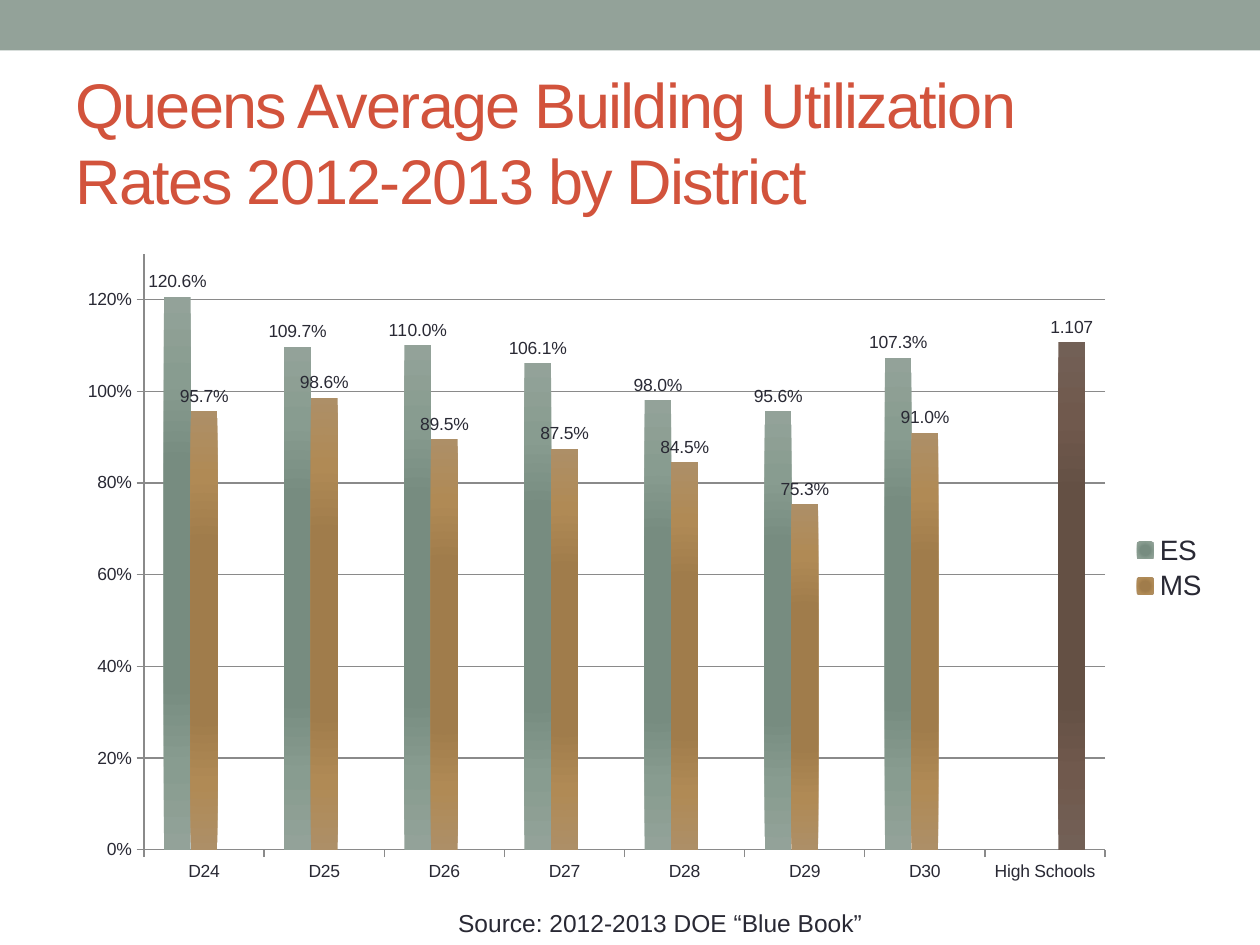
import pptx
import pptx.util
import pptx.chart.data
import pptx.dml.color
import pptx.enum.chart
import pptx.enum.shapes
import pptx.enum.text
import pptx.oxml
import pptx.oxml.ns

Inches = pptx.util.Inches
Pt = pptx.util.Pt

FONT = "Arial"
COLORS = {"band": "93A299", "title": "D2533C", "text": "292934", "line": "8A8A8A"}
TITLE = "Queens Average Building Utilization Rates 2012-2013 by District"
SOURCE = "Source: 2012-2013 DOE “Blue Book”"
CATEGORIES = ["D24", "D25", "D26", "D27", "D28", "D29", "D30", "High Schools"]
SERIES = [
    {"name": "ES", "format": "0.0%", "gradient": ("778C80", "889C90", "93A299"),
     "values": [1.206, 1.097, 1.1, 1.061, 0.98, 0.956, 1.073, None]},
    {"name": "MS", "format": "0.0%", "gradient": ("A07C4B", "B08A55", "AD8F67"),
     "values": [0.957, 0.986, 0.895, 0.875, 0.845, 0.753, 0.91, None]},
    {"name": "Series 3", "format": "General", "gradient": ("645044", "70594D", "726056"),
     "values": [None] * 7 + [1.107]},
]
PLOT_LAYOUT = {"x": 0.07, "y": 0.02, "w": 0.83, "h": 0.91}
NAMESPACES = pptx.oxml.ns.nsdecls("a", "c")


def rgb(name):
    return pptx.dml.color.RGBColor.from_string(COLORS[name])


def style_font(font, size, color):
    font.name = FONT
    font.size = Pt(size)
    font.color.rgb = rgb(color)


def write_text(shape, text, size, color):
    frame = shape.text_frame
    frame.word_wrap = True
    frame.text = text
    style_font(frame.paragraphs[0].runs[0].font, size, color)
    return frame


def gradient_fill(colors):
    stops = "".join(
        f'<a:gs pos="{position}"><a:srgbClr val="{color}"/></a:gs>'
        for position, color in zip((0, 40000, 70000, 100000), (colors[0], *colors))
    )
    return pptx.oxml.parse_xml(
        f'<a:gradFill {NAMESPACES} rotWithShape="1"><a:gsLst>{stops}</a:gsLst>'
        '<a:path path="circle"><a:fillToRect l="50000" t="50000" r="50000" b="50000"/>'
        "</a:path></a:gradFill>"
    )


def style_axis(axis):
    style_font(axis.tick_labels.font, 10, "text")
    axis.major_tick_mark = pptx.enum.chart.XL_TICK_MARK.OUTSIDE
    axis.minor_tick_mark = pptx.enum.chart.XL_TICK_MARK.NONE
    axis.format.line.color.rgb = rgb("line")
    axis.format.line.width = Pt(0.75)


def set_plot_layout(chart):
    plot_area = chart.plots[0]._element.getparent()
    for layout in plot_area.findall(pptx.oxml.ns.qn("c:layout")):
        plot_area.remove(layout)
    sizes = "".join(f'<c:{key} val="{value}"/>' for key, value in PLOT_LAYOUT.items())
    plot_area.insert(0, pptx.oxml.parse_xml(
        f'<c:layout {NAMESPACES}><c:manualLayout><c:layoutTarget val="inner"/>'
        f'<c:xMode val="edge"/><c:yMode val="edge"/>{sizes}</c:manualLayout></c:layout>'
    ))


def add_utilization_chart(slide):
    data = pptx.chart.data.CategoryChartData(number_format="0.0%")
    data.categories = CATEGORIES
    for item in SERIES:
        data.add_series(item["name"], item["values"], item["format"])
    chart = slide.shapes.add_chart(
        pptx.enum.chart.XL_CHART_TYPE.COLUMN_CLUSTERED,
        Inches(0.5), Inches(1.91), Inches(9.19), Inches(5.2), data,
    ).chart
    chart.has_title = False
    style_font(chart.font, 10, "text")

    style_axis(chart.category_axis)
    value_axis = chart.value_axis
    style_axis(value_axis)
    value_axis.minimum_scale = 0
    value_axis.maximum_scale = 1.3
    value_axis.major_unit = 0.2
    value_axis.tick_labels.number_format = "0%"
    value_axis.tick_labels.number_format_is_linked = False
    value_axis.major_gridlines.format.line.color.rgb = rgb("line")
    value_axis.major_gridlines.format.line.width = Pt(0.75)

    plot = chart.plots[0]
    plot.gap_width = 150
    plot.overlap = 0
    plot.vary_by_categories = False
    for series, item in zip(plot.series, SERIES):
        series.invert_if_negative = False
        series.format.line.fill.background()
        series._element.get_or_add_spPr().insert(0, gradient_fill(item["gradient"]))
        labels = series.data_labels
        labels.show_value = True
        labels.number_format = item["format"]
        labels.number_format_is_linked = False
        labels.position = pptx.enum.chart.XL_LABEL_POSITION.OUTSIDE_END
        style_font(labels.font, 10, "text")

    chart.has_legend = True
    legend = chart.legend
    legend.position = pptx.enum.chart.XL_LEGEND_POSITION.RIGHT
    legend.include_in_layout = False
    style_font(legend.font, 16, "text")
    legend._element.insert(1, pptx.oxml.parse_xml(
        f'<c:legendEntry {NAMESPACES}><c:idx val="2"/><c:delete val="1"/></c:legendEntry>'
    ))
    set_plot_layout(chart)


def main():
    presentation = pptx.Presentation()
    presentation.slide_width = Inches(10)
    presentation.slide_height = Inches(7.5)
    slide = presentation.slides.add_slide(presentation.slide_layouts[6])

    band = slide.shapes.add_shape(
        pptx.enum.shapes.MSO_SHAPE.RECTANGLE, 0, 0, Inches(10), Inches(0.4))
    band.shadow.inherit = False
    band.fill.solid()
    band.fill.fore_color.rgb = rgb("band")
    band.line.fill.background()

    title = slide.shapes.add_textbox(Inches(0.5), Inches(0.58), Inches(9), Inches(1.08))
    frame = write_text(title, TITLE, 36, "title")
    frame.vertical_anchor = pptx.enum.text.MSO_ANCHOR.MIDDLE
    frame.paragraphs[0].runs[0].font._element.set("spc", "-100")

    add_utilization_chart(slide)

    source = slide.shapes.add_textbox(Inches(0.5), Inches(7.16), Inches(9.48), Inches(0.34))
    frame = write_text(source, SOURCE, 14, "text")
    frame.paragraphs[0].alignment = pptx.enum.text.PP_ALIGN.CENTER

    presentation.save("out.pptx")


if __name__ == "__main__":
    main()
